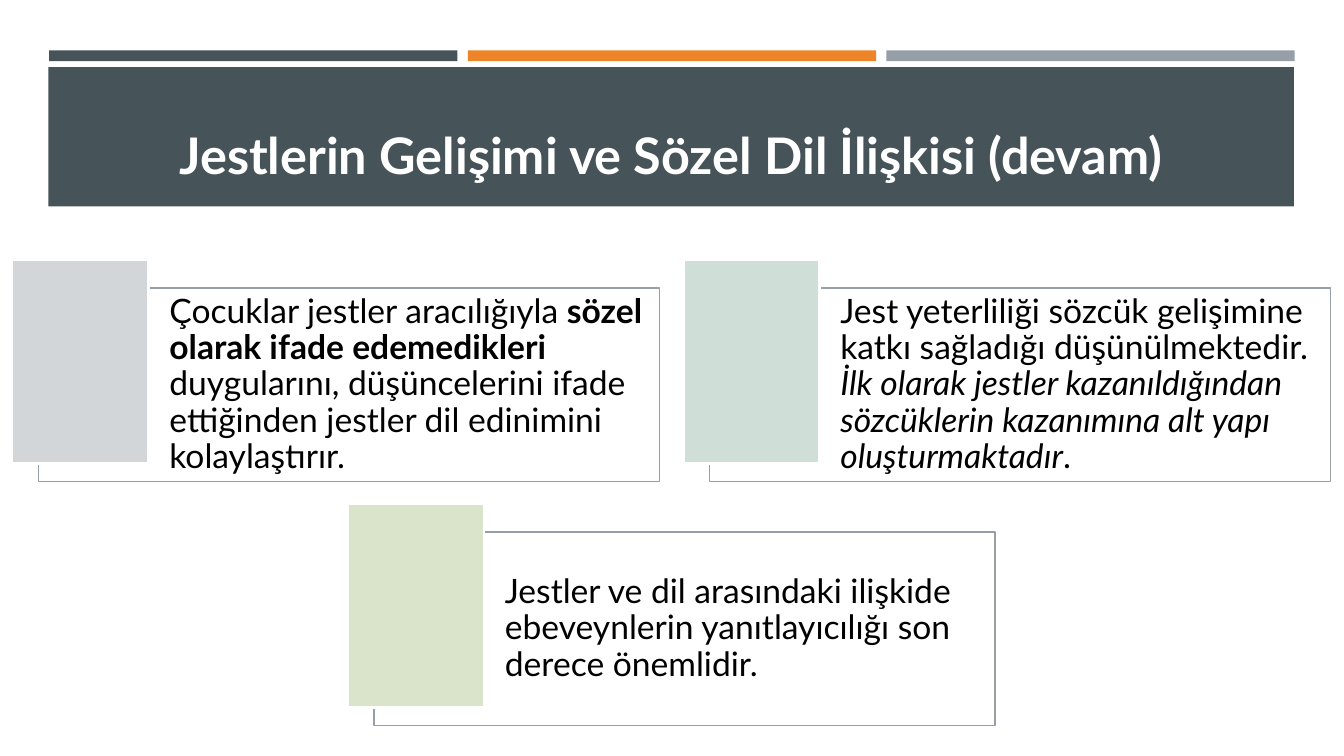
from pptx import Presentation
from pptx.dml.color import RGBColor
from pptx.enum.shapes import MSO_SHAPE
from pptx.enum.text import MSO_ANCHOR, PP_ALIGN
from pptx.util import Cm, Pt

SLATE = RGBColor(0x46, 0x53, 0x59)
ORANGE = RGBColor(0xED, 0x84, 0x28)
GREY = RGBColor(0x96, 0x9F, 0xA7)
WHITE = RGBColor(0xFF, 0xFF, 0xFF)
BLACK = RGBColor(0x00, 0x00, 0x00)
PALE_GREY = RGBColor(0xD3, 0xD6, 0xD9)
PALE_TEAL = RGBColor(0xCF, 0xDE, 0xD6)
PALE_GREEN = RGBColor(0xDA, 0xE4, 0xCB)

TITLE = "Jestlerin Gelişimi ve Sözel Dil İlişkisi (devam)"
BAR_PITCH = 10.55
CARD_LEFT, CARD_TOP = 0.97, 7.26
CARD_PITCH_X, CARD_PITCH_Y = 16.91, 6.15

# Each card: column, row, tab colour, spans of (text, font format)
CARDS = [
    (0, 0, PALE_GREY, [
        ("Çocuklar jestler aracılığıyla ", {}),
        ("sözel olarak ifade edemedikleri ", {"bold": True}),
        ("duygularını, düşüncelerini ifade ettiğinden jestler dil "
         "edinimini kolaylaştırır.", {}),
    ]),
    (1, 0, PALE_TEAL, [
        ("Jest yeterliliği sözcük gelişimine katkı sağladığı "
         "düşünülmektedir. ", {}),
        ("İlk olarak jestler kazanıldığından sözcüklerin kazanımına "
         "alt yapı oluşturmaktadır", {"italic": True}),
        (".", {}),
    ]),
    (0.5, 1, PALE_GREEN, [
        ("Jestler ve dil arasındaki ilişkide ebeveynlerin "
         "yanıtlayıcılığı son derece önemlidir.", {}),
    ]),
]


def add_box(page, left, top, width, height, fill, line=None, line_width=1):
    box = page.shapes.add_shape(
        MSO_SHAPE.RECTANGLE, Cm(left), Cm(top), Cm(width), Cm(height))
    box.shadow.inherit = False
    box.fill.solid()
    box.fill.fore_color.rgb = fill
    if line is None:
        box.line.fill.background()
    else:
        box.line.color.rgb = line
        box.line.width = Pt(line_width)
    return box


def write_text(box, spans, size, color, align, anchor, insets):
    """Fill the box with one paragraph; insets are left, top, right, bottom in cm."""
    frame = box.text_frame
    frame.word_wrap = True
    frame.vertical_anchor = anchor
    for side, inset in zip(("left", "top", "right", "bottom"), insets):
        setattr(frame, f"margin_{side}", Cm(inset))
    para = frame.paragraphs[0]
    para.alignment = align
    para.line_spacing = 0.9
    for text, style in spans:
        span = para.add_run()
        span.text = text
        span.font.color.rgb = color
        for name, value in {"name": "Lato", "size": Pt(size), **style}.items():
            setattr(span.font, name, value)


def add_header(page):
    for index, color in enumerate((SLATE, ORANGE, GREY)):
        add_box(page, 1.24 + index * BAR_PITCH, 1.27, 10.29, 0.27, color)
    banner = add_box(page, 1.22, 1.69, 31.39, 3.51, SLATE)
    write_text(banner, [(TITLE, {"bold": True})], 36, WHITE,
               PP_ALIGN.CENTER, MSO_ANCHOR.BOTTOM, (0.64, 0.5, 0.64, 0.53))


def add_card(page, column, row, tab_color, spans):
    left = CARD_LEFT + column * CARD_PITCH_X
    top = CARD_TOP + row * CARD_PITCH_Y
    frame = add_box(page, left, top, 15.65, 4.88, WHITE, GREY)
    write_text(frame, spans, 24, BLACK,
               PP_ALIGN.LEFT, MSO_ANCHOR.MIDDLE, (3.3, 0.25, 0.25, 0.25))
    add_box(page, left - 0.66, top - 0.71, 3.43, 5.13, tab_color, WHITE, 1.75)


def main():
    deck = Presentation()
    deck.slide_width, deck.slide_height = Cm(33.87), Cm(19.05)
    page = deck.slides.add_slide(deck.slide_layouts[6])
    add_header(page)
    for card in CARDS:
        add_card(page, *card)
    deck.save("out.pptx")


if __name__ == "__main__":
    main()
